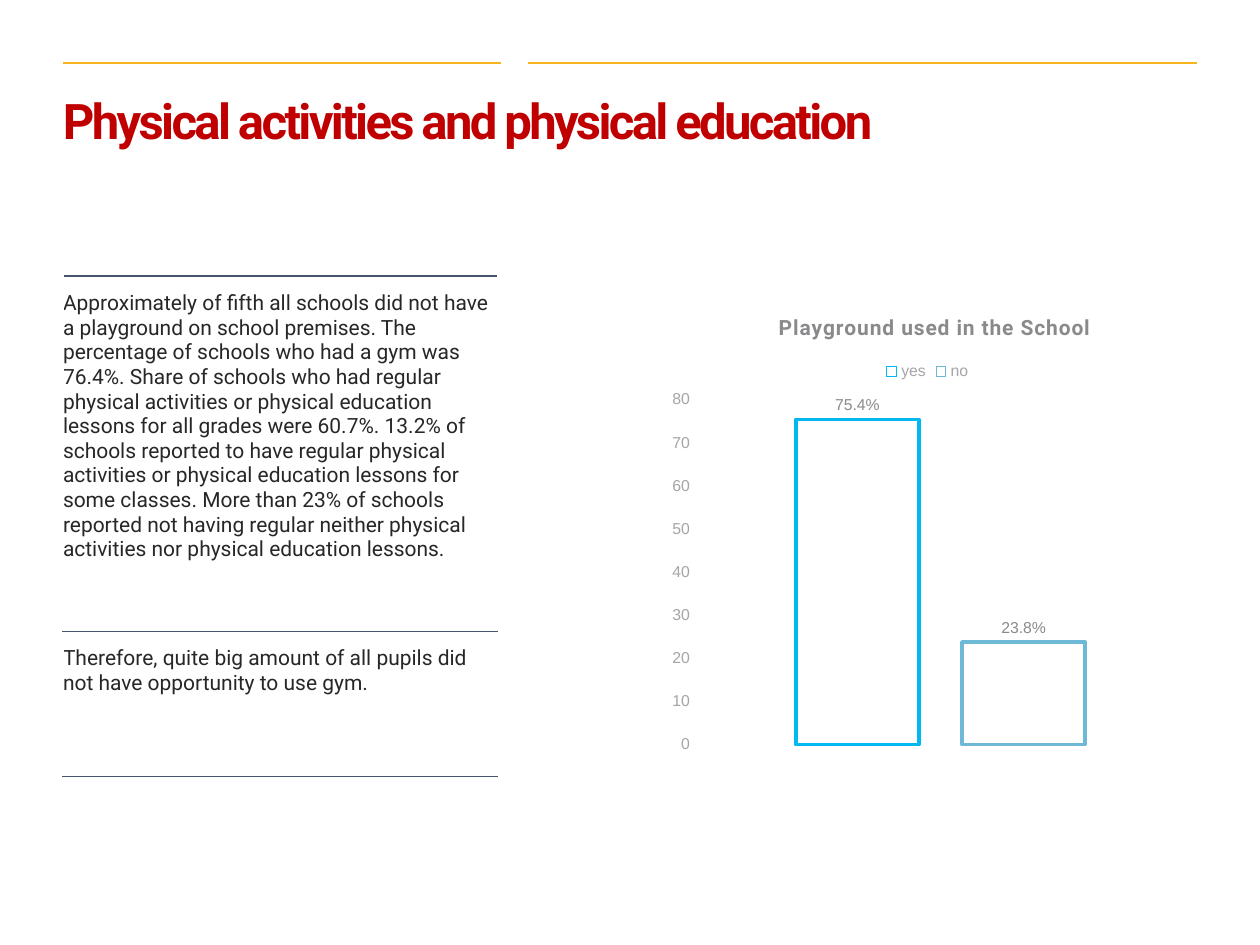
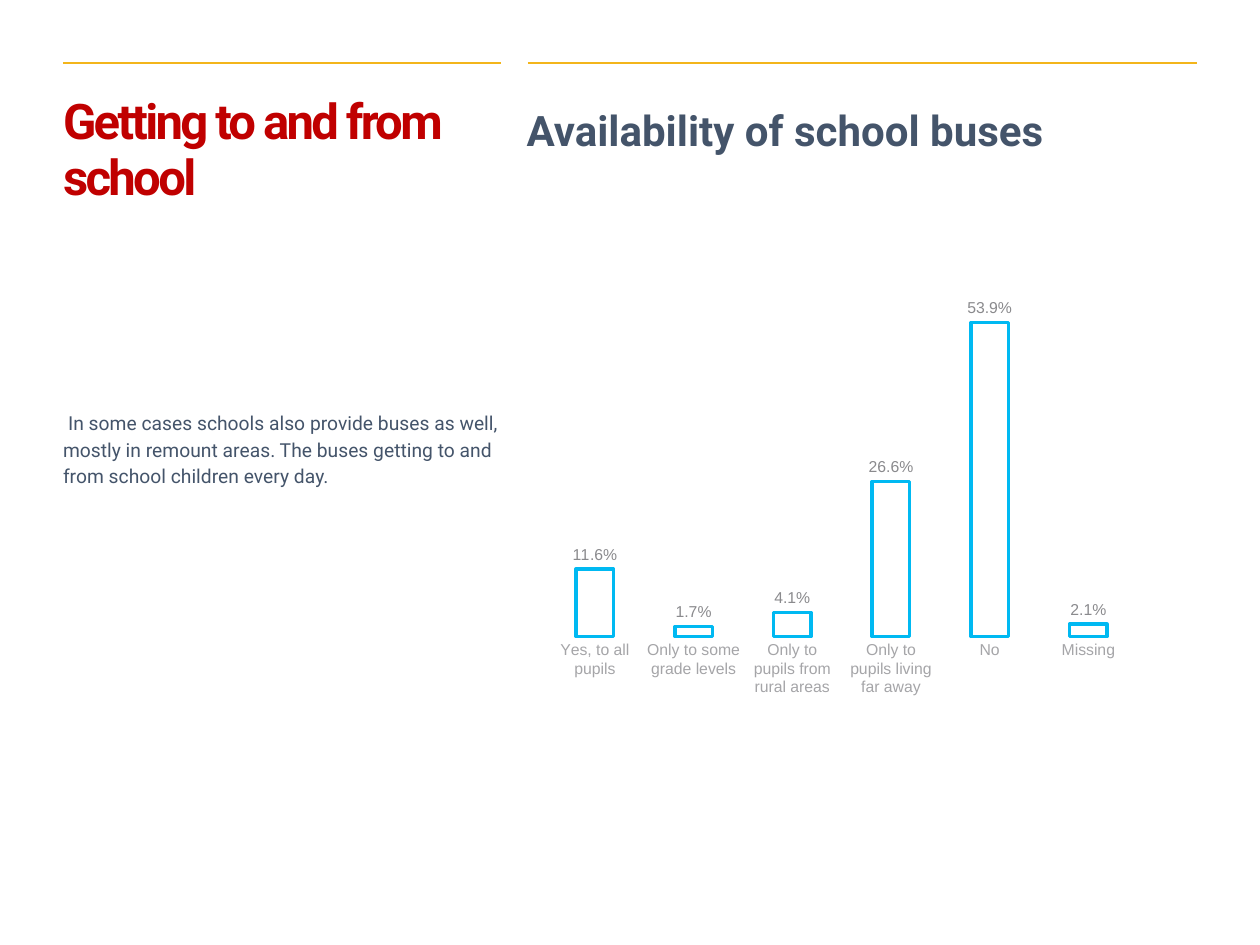
from lxml import etree
from pptx import Presentation
from pptx import util as u
from pptx.chart.data import CategoryChartData
from pptx.dml.color import RGBColor
from pptx.enum import chart as ch, shapes
from pptx.oxml import parse_xml
from pptx.oxml.ns import nsdecls, qn

COLORS = {
    "rule": "F3B51B", "title": "C00000", "slate": "44546A", "body": "272728",
    "axis": "A5A5A8", "label": "8A8A8D", "chart": "4D4D4F",
    "sky": "00B9F2", "steel": "6FB9D8",
}
LEFT, COLUMN_WIDTH, TITLE_TOP = 0.5, 3.48, 0.75
RULE_TOP, RULE_SPANS = 0.5, [(0.5, 3.98), (4.19, 9.5)]

TITLE = {"size": 28, "color": "title", "bold": True, "spacing": 0.95, "tracking": -1.5}
HEADING = {"size": 24, "color": "slate", "bold": True, "spacing": 1.2}
REMARK = {"size": 11, "color": "slate", "spacing": 1.14, "indent": 0.04}
FINDING = {"size": 12, "color": "body"}


def rgb(name):
    return RGBColor.from_string(COLORS[name])


def set_all(target, **values):
    for name, value in values.items():
        setattr(target, name, value)


def style_font(font, size, color, name="Roboto", bold=False):
    set_all(font, name=name, size=u.Pt(size), bold=bold)
    font.color.rgb = rgb(color)


def write(frame, content, style):
    paragraph = frame.paragraphs[0]
    run = paragraph.add_run()
    run.text = content
    style_font(run.font, style["size"], style["color"], bold=style.get("bold", False))
    if "spacing" in style:
        paragraph.line_spacing = style["spacing"]
    if "tracking" in style:
        run.font._element.set("spc", str(int(style["tracking"] * 100)))
    if "indent" in style:
        paragraph._p.get_or_add_pPr().set("indent", str(u.Inches(style["indent"])))


def add_text(slide, left, top, width, height, content, style):
    box = slide.shapes.add_textbox(*map(u.Inches, (left, top, width, height)))
    set_all(box.text_frame, word_wrap=True, margin_left=0, margin_right=0,
            margin_top=0, margin_bottom=0)
    write(box.text_frame, content, style)


def add_rule(slide, start, end):
    rule = slide.shapes.add_connector(
        shapes.MSO_CONNECTOR.STRAIGHT,
        u.Inches(start), u.Inches(RULE_TOP), u.Inches(end), u.Inches(RULE_TOP))
    rule.line.color.rgb = rgb("rule")
    rule.line.width = u.Pt(1)
    etree.SubElement(rule._element.spPr, qn("a:effectLst"))


def add_titled_slide(deck, title, width, height):
    slide = deck.slides.add_slide(deck.slide_layouts[6])
    for span in RULE_SPANS:
        add_rule(slide, *span)
    add_text(slide, LEFT, TITLE_TOP, width, height, title, TITLE)
    return slide


def rule_cell(cell):
    """Draw a thin line above and below the cell."""
    for position, edge in enumerate(("lnT", "lnB")):
        cell._tc.get_or_add_tcPr().insert(position, parse_xml(
            f'<a:{edge} {nsdecls("a")} w="{u.Pt(0.75)}"><a:solidFill>'
            f'<a:srgbClr val="{COLORS["slate"]}"/></a:solidFill></a:{edge}>'))


def add_findings(slide, top, width, findings):
    """Stack (height, text) pairs in a one-column ruled table."""
    total = sum(height for height, _ in findings)
    table = slide.shapes.add_table(
        len(findings), 1, *map(u.Inches, (LEFT, top, width, total))).table
    set_all(table, first_row=False, horz_banding=False)
    for row, (height, content) in zip(table.rows, findings):
        row.height = u.Inches(height)
        cell = row.cells[0]
        set_all(cell, margin_left=0, margin_right=0,
                margin_top=u.Inches(0.12), margin_bottom=u.Inches(0.12))
        cell.fill.background()
        rule_cell(cell)
        write(cell.text_frame, content, FINDING)


def place(part, index, inner=False, **fractions):
    """Fix a chart part at fractions of the chart's width and height."""
    for old in part.findall(qn("c:layout")):
        part.remove(old)
    target = '<c:layoutTarget val="inner"/>' if inner else ""
    modes = "".join(f'<c:{key}Mode val="edge"/>' for key in "xy")
    values = "".join(f'<c:{key} val="{value}"/>' for key, value in fractions.items())
    part.insert(index, parse_xml(
        f'<c:layout {nsdecls("c")}><c:manualLayout>{target}{modes}{values}'
        '</c:manualLayout></c:layout>'))


def add_outline_columns(slide, box, categories, series, number_format, top_value, plot_area):
    """Add hollow columns; series holds (name, values, colour) triples."""
    data = CategoryChartData(number_format=number_format)
    data.categories = categories
    for name, values, _ in series:
        data.add_series(name, values)
    chart = slide.shapes.add_chart(
        ch.XL_CHART_TYPE.COLUMN_CLUSTERED, *map(u.Inches, box), data).chart
    set_all(chart, has_legend=False, has_title=False)
    style_font(chart.font, 10, "chart", "Arial")

    plot = chart.plots[0]
    set_all(plot, gap_width=164, overlap=-35, vary_by_categories=False, has_data_labels=True)
    set_all(plot.data_labels, show_value=True, number_format=number_format,
            number_format_is_linked=False, position=ch.XL_LABEL_POSITION.OUTSIDE_END)
    style_font(plot.data_labels.font, 9, "label", "Arial")
    for columns, (_, _, color) in zip(plot.series, series):
        columns.format.fill.background()
        columns.format.line.color.rgb = rgb(color)
        columns.format.line.width = u.Pt(2)

    for axis in (chart.category_axis, chart.value_axis):
        set_all(axis, has_major_gridlines=False, major_tick_mark=ch.XL_TICK_MARK.NONE)
        style_font(axis.tick_labels.font, 9, "axis", "Arial")
        axis.format.line.fill.background()
    set_all(chart.value_axis, minimum_scale=0, maximum_scale=top_value)
    place(chart._chartSpace.chart.plotArea, 0, inner=True, **plot_area)
    return chart


def add_chart_heading(chart, heading):
    """Put a title and a legend above the columns."""
    chart.has_title = True
    write(chart.chart_title.text_frame, heading,
          {"size": 12, "color": "label", "bold": True, "tracking": 0.5})
    chart.chart_title.include_in_layout = False
    place(chart.chart_title._element, 1, x=0.21, y=0.04)
    chart.has_legend = True
    set_all(chart.legend, position=ch.XL_LEGEND_POSITION.TOP, include_in_layout=False)
    style_font(chart.legend.font, 9, "axis", "Arial")
    place(chart.legend._element, 1, x=0.41, y=0.14)


def build_activities(deck):
    slide = add_titled_slide(deck, "Physical activities and physical education", 7.53, 0.85)
    add_findings(slide, 2.19, 3.45, [
        (2.82, "Approximately of fifth all schools did not have a playground on school "
               "premises. The percentage of schools who had a gym was 76.4%. Share of schools "
               "who had regular physical activities or physical education lessons for all "
               "grades were 60.7%. 13.2% of schools reported to have regular physical "
               "activities or physical education lessons for some classes. More than 23% of "
               "schools reported not having regular neither physical activities nor physical "
               "education lessons."),
        (1.15, "Therefore, quite big amount of all pupils did not have opportunity to use gym."),
    ])
    playground = add_outline_columns(
        slide, (5.26, 2.31, 4.24, 3.75), ["1"],
        [("yes", [75.4], "sky"), ("no", [23.8], "steel")],
        '0.0"%"', 80, {"x": 0.06, "y": 0.23, "w": 0.92, "h": 0.73})
    playground.category_axis.visible = False
    playground.value_axis.major_unit = 10
    set_all(playground.value_axis.tick_labels, number_format="0", number_format_is_linked=False)
    add_chart_heading(playground, "Playground used in the School")


def build_buses(deck):
    slide = add_titled_slide(deck, "Getting to and from school", COLUMN_WIDTH, 1.34)
    add_text(slide, LEFT, 3.24, COLUMN_WIDTH, 2.62,
             "In some cases schools also provide buses as well, mostly in remount areas. "
             "The buses getting to and from school children every day.", REMARK)
    add_text(slide, 4.18, TITLE_TOP, 5.32, 0.53, "Availability of school buses", HEADING)
    availability = {
        "Yes, to all pupils": 0.116,
        "Only to some grade levels": 0.017,
        "Only to pupils from rural areas": 0.041,
        "Only to pupils living far away": 0.266,
        "No": 0.539,
        "Missing": 0.021,
    }
    buses = add_outline_columns(
        slide, (4.18, 2.09, 5, 3.75), list(availability),
        [("Series 1", list(availability.values()), "sky")],
        "0.0%", 0.6, {"x": 0.03, "y": 0.05, "w": 0.94, "h": 0.74})
    buses.value_axis.visible = False


def main():
    deck = Presentation()
    set_all(deck, slide_width=u.Inches(10), slide_height=u.Inches(7.5))
    build_activities(deck)
    build_buses(deck)
    deck.save("out.pptx")


if __name__ == "__main__":
    main()
